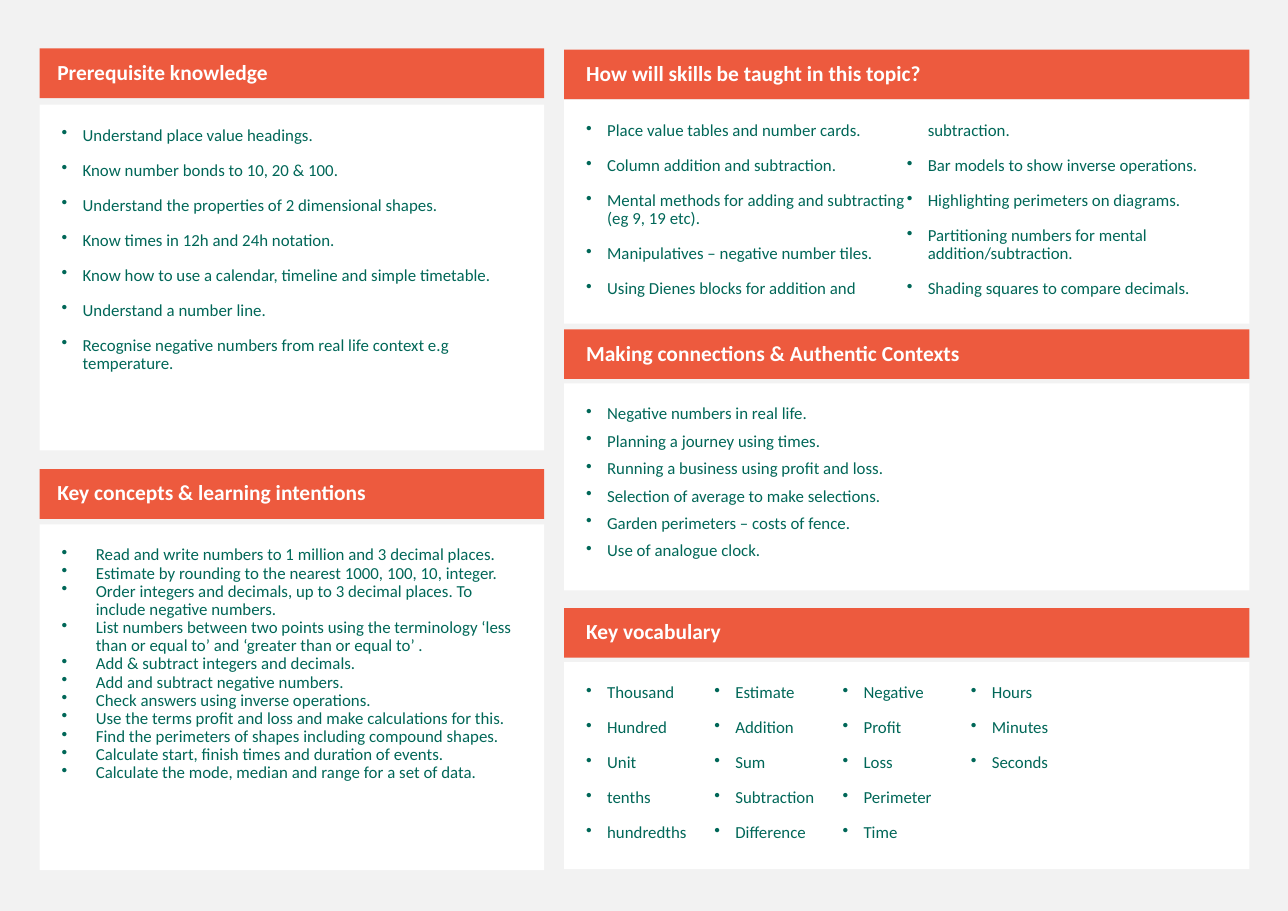
from lxml import etree
from pptx import Presentation, util as u
from pptx.dml import color
from pptx.enum import shapes, text
from pptx.oxml import ns

PX = 9144  # EMU per px, 100 px to the inch
LEFT_COLUMN = (36, 458, 16)  # left, width, heading inset
RIGHT_COLUMN = (512, 622, 20)
HEADING_HEIGHT = 45


def px(length):
    return u.Emu(length * PX)


def rgb(value):
    return color.RGBColor.from_string(value)


class TopicSlide:
    background, orange, white, green = "F2F2F2", "ED5A3E", "FFFFFF", "006758"
    font = "Calibri"

    def __init__(self, presentation):
        self.slide = presentation.slides.add_slide(presentation.slide_layouts[6])
        fill = self.slide.background.fill
        fill.solid()
        fill.fore_color.rgb = rgb(self.background)

    def box(self, left, top, width, height, fill, insets, anchor):
        shape = self.slide.shapes.add_shape(
            shapes.MSO_SHAPE.RECTANGLE, px(left), px(top), px(width), px(height))
        shape.shadow.inherit = False
        shape.fill.solid()
        shape.fill.fore_color.rgb = rgb(fill)
        shape.line.fill.background()
        frame = shape.text_frame
        frame.word_wrap = True
        frame.vertical_anchor = anchor
        (frame.margin_left, frame.margin_top,
         frame.margin_right, frame.margin_bottom) = map(px, insets)
        return frame

    def set_lines(self, frame, lines, size, ink, before, bold=False):
        frame.text = "\n".join(lines)
        for paragraph in frame.paragraphs:
            paragraph.alignment = text.PP_ALIGN.LEFT
            paragraph.line_spacing = 0.9
            paragraph.space_before = u.Pt(before)
            for run in paragraph.runs:
                run.font.name = self.font
                run.font.size = u.Pt(size)
                run.font.bold = bold
                run.font.color.rgb = rgb(ink)

    def heading(self, column, top, title):
        left, width, inset = column
        frame = self.box(left, top, width, HEADING_HEIGHT, self.orange,
                         (inset, 5, 10, 5), text.MSO_ANCHOR.MIDDLE)
        self.set_lines(frame, [title], 14, self.white, 11, bold=True)

    def bullets(self, column, top, height, items, before=11, indent=19, columns=1):
        left, width, _ = column
        frame = self.box(left, top, width, height, self.white,
                         (20, 20, 20, 20), text.MSO_ANCHOR.TOP)
        self.set_lines(frame, items, 11, self.green, before)
        if columns > 1:
            frame._txBody.bodyPr.set("numCol", str(columns))
        for paragraph in frame.paragraphs:
            properties = paragraph._p.get_or_add_pPr()
            properties.set("marL", str(px(indent)))
            properties.set("indent", str(-px(indent)))
            etree.SubElement(properties, ns.qn("a:buChar")).set("char", "•")


def main():
    presentation = Presentation()
    presentation.slide_width, presentation.slide_height = px(1169), px(827)
    topic = TopicSlide(presentation)

    # Left column: prior knowledge and learning intentions
    topic.heading(LEFT_COLUMN, 44, "Prerequisite knowledge")
    topic.bullets(LEFT_COLUMN, 95, 314, [
        "Understand place value headings.",
        "Know number bonds to 10, 20 & 100.",
        "Understand the properties of 2 dimensional shapes.",
        "Know times in 12h and 24h notation.",
        "Know how to use a calendar, timeline and simple timetable.",
        "Understand a number line.",
        "Recognise negative numbers from real life context e.g temperature.",
    ])
    topic.heading(LEFT_COLUMN, 426, "Key concepts & learning intentions")
    topic.bullets(LEFT_COLUMN, 476, 314, [
        "Read and write numbers to 1 million and 3 decimal places.",
        "Estimate by rounding to the nearest 1000, 100, 10, integer.",
        "Order integers and decimals, up to 3 decimal places. To include negative numbers.",
        "List numbers between two points using the terminology ‘less than or equal to’ "
        "and ‘greater than or equal to’ .",
        "Add & subtract integers and decimals.",
        "Add and subtract negative numbers.",
        "Check answers using inverse operations.",
        "Use the terms profit and loss and make calculations for this.",
        "Find the perimeters of shapes including compound shapes.",
        "Calculate start, finish times and duration of events.",
        "Calculate the mode, median and range for a set of data.",
    ], before=0, indent=31)

    # Right column: skills, contexts and vocabulary
    topic.heading(RIGHT_COLUMN, 45, "How will skills be taught in this topic?")
    topic.bullets(RIGHT_COLUMN, 91, 203, [
        "Place value tables and number cards.",
        "Column addition and subtraction.",
        "Mental methods for adding and subtracting (eg 9, 19 etc).",
        "Manipulatives – negative number tiles.",
        "Using Dienes blocks for addition and subtraction.",
        "Bar models to show inverse operations.",
        "Highlighting perimeters on diagrams.",
        "Partitioning numbers for mental addition/subtraction.",
        "Shading squares to compare decimals.",
    ], columns=2)
    topic.heading(RIGHT_COLUMN, 299, "Making connections & Authentic Contexts")
    topic.bullets(RIGHT_COLUMN, 348, 188, [
        "Negative numbers in real life.",
        "Planning a journey using times.",
        "Running a business using profit and loss.",
        "Selection of average to make selections.",
        "Garden perimeters – costs of fence.",
        "Use of analogue clock.",
    ], before=6)
    topic.heading(RIGHT_COLUMN, 552, "Key vocabulary")
    topic.bullets(RIGHT_COLUMN, 601, 188, [
        "Thousand", "Hundred", "Unit", "tenths", "hundredths",
        "Estimate", "Addition", "Sum", "Subtraction", "Difference",
        "Negative", "Profit", "Loss", "Perimeter", "Time",
        "Hours", "Minutes", "Seconds",
    ], columns=5)

    presentation.save("out.pptx")


if __name__ == "__main__":
    main()
